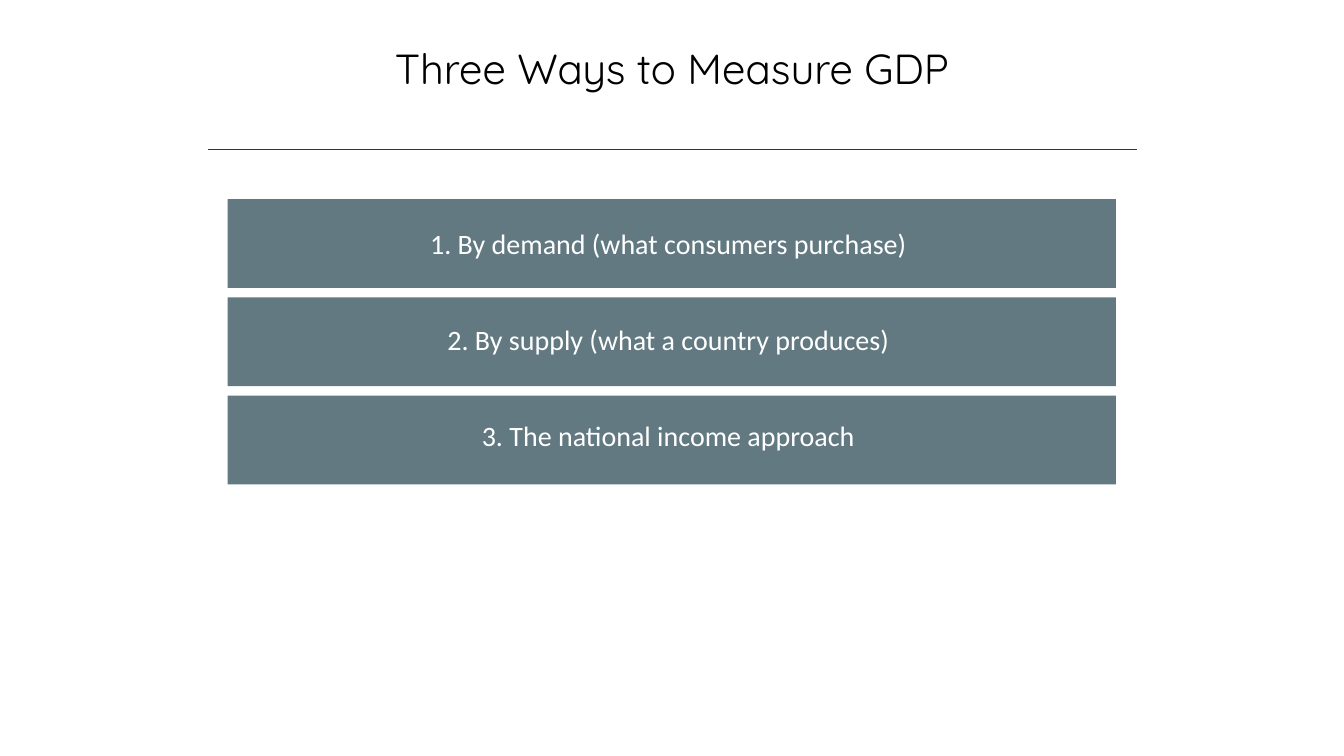
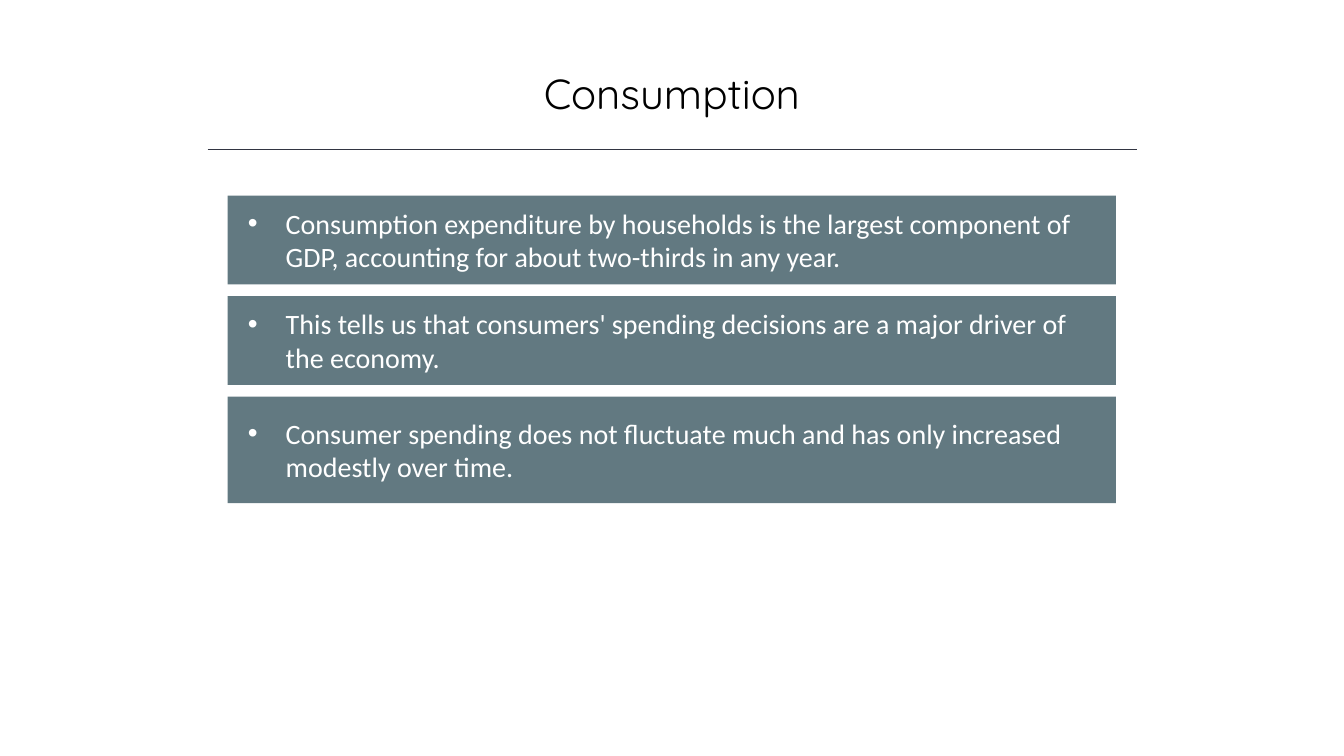
from lxml.etree import SubElement
from pptx import Presentation
from pptx.dml.color import RGBColor
from pptx.enum.shapes import MSO_CONNECTOR as Connector, MSO_SHAPE as Shape
from pptx.enum.text import MSO_ANCHOR as Anchor, PP_ALIGN as Align
from pptx.oxml.ns import qn
from pptx.util import Pt

COLORS = {"title": "000000", "rule": "323542", "bar": "627981", "bar_text": "FFFFFF"}
TITLE_FONT, BODY_FONT = "Quicksand", "Calibri"
PAGE_WIDTH, PAGE_HEIGHT = 960, 540
TITLE_WIDTH, TITLE_HEIGHT = 720, 44
RULE_LEFT, RULE_TOP, RULE_WIDTH = 148.3, 106.6, 664
BAR_LEFT, BAR_WIDTH, BAR_HEIGHT = 162.7, 634.4, 63.4
BULLET_INDENT = 27


def color(name):
    return RGBColor.from_string(COLORS[name])


def set_font(para, name, size, color_name):
    para.font.name = name
    para.font.size = Pt(size)
    para.font.color.rgb = color(color_name)


def add_bullet(para):
    properties = para._p.get_or_add_pPr()
    properties.set("marL", str(Pt(BULLET_INDENT)))
    properties.set("indent", str(-Pt(BULLET_INDENT)))
    SubElement(properties, qn("a:buFont")).set("typeface", "Arial")
    SubElement(properties, qn("a:buChar")).set("char", "•")


def add_header(page, title, top):
    # Title
    left = (PAGE_WIDTH - TITLE_WIDTH) / 2
    box = page.shapes.add_textbox(Pt(left), Pt(top), Pt(TITLE_WIDTH), Pt(TITLE_HEIGHT))
    box.text_frame.word_wrap = True
    para = box.text_frame.paragraphs[0]
    para.text = title
    para.alignment = Align.CENTER
    set_font(para, TITLE_FONT, 30, "title")

    # Rule below the title
    rule = page.shapes.add_connector(
        Connector.STRAIGHT, Pt(RULE_LEFT), Pt(RULE_TOP), Pt(RULE_LEFT + RULE_WIDTH), Pt(RULE_TOP))
    rule.line.color.rgb = color("rule")
    rule.line.width = Pt(1)
    SubElement(rule._element.spPr, qn("a:effectLst"))


def add_bar(page, text, top, height, bulleted, lift):
    """Draw one bar; its text sits `lift` points above the middle."""
    bar = page.shapes.add_shape(
        Shape.RECTANGLE, Pt(BAR_LEFT), Pt(top), Pt(BAR_WIDTH), Pt(height))
    bar.shadow.inherit = False
    bar.fill.solid()
    bar.fill.fore_color.rgb = color("bar")
    bar.line.fill.background()

    frame = bar.text_frame
    frame.word_wrap = True
    frame.vertical_anchor = Anchor.MIDDLE
    frame.margin_left, frame.margin_right = Pt(14.4), Pt(19.4)
    frame.margin_top, frame.margin_bottom = 0, Pt(2 * lift)
    para = frame.paragraphs[0]
    para.text = text
    para.alignment = Align.LEFT if bulleted else Align.CENTER
    if bulleted:
        add_bullet(para)
    set_font(para, BODY_FONT, 20, "bar_text")


def add_bar_slide(deck, title, title_top, bars, top, gap, bulleted=False, lift_step=0):
    """Build a slide from a title and a stack of (text, height) bars."""
    page = deck.slides.add_slide(deck.slide_layouts[6])
    add_header(page, title, title_top)
    for index, (text, height) in enumerate(bars):
        add_bar(page, text, top, height, bulleted, index * lift_step)
        top += height + gap


def main():
    deck = Presentation()
    deck.slide_width, deck.slide_height = Pt(PAGE_WIDTH), Pt(PAGE_HEIGHT)

    add_bar_slide(deck, "Three Ways to Measure GDP", 26.6, [
        ("1. By demand (what consumers purchase)", BAR_HEIGHT),
        ("2. By supply (what a country produces)", BAR_HEIGHT),
        ("3. The national income approach", BAR_HEIGHT),
    ], top=142.2, gap=6.8, lift_step=1.7)

    add_bar_slide(deck, "Consumption", 44.6, [
        ("Consumption expenditure by households is the largest component of GDP, "
         "accounting for about two-thirds in any year.", BAR_HEIGHT),
        ("This tells us that consumers' spending decisions are a major driver of "
         "the economy.", BAR_HEIGHT),
        ("Consumer spending does not fluctuate much and has only increased "
         "modestly over time.", 76.2),
    ], top=139.7, gap=8.4, bulleted=True)

    deck.save("out.pptx")


if __name__ == "__main__":
    main()
